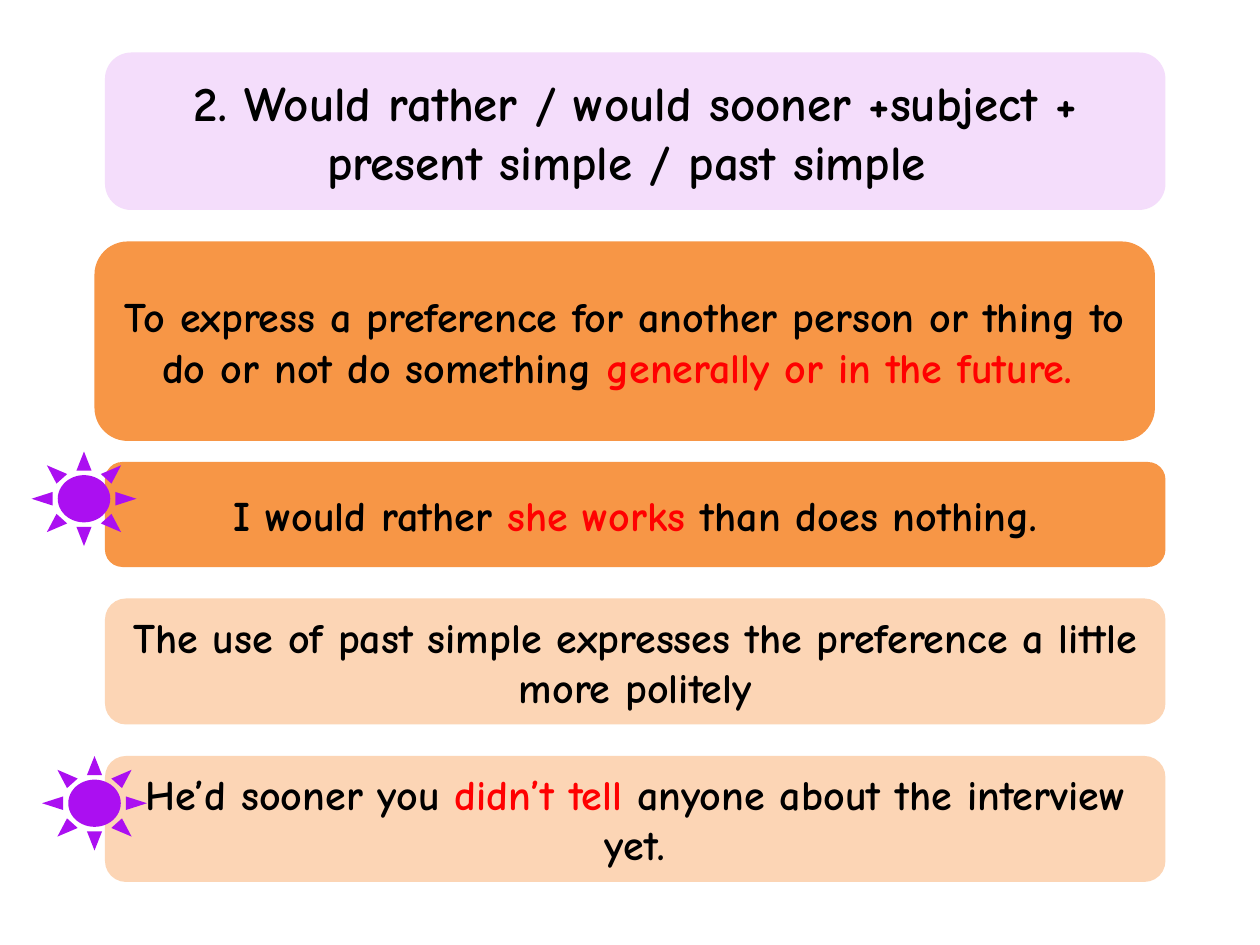
from pptx import Presentation
from pptx import util as u
from pptx.dml.color import RGBColor
from pptx.enum import shapes, text

PX = u.Inches(1) // 120
FONT = "Comic Neue"
BLACK = RGBColor(0x00, 0x00, 0x00)
RED = RGBColor(0xFF, 0x00, 0x00)
LILAC = RGBColor(0xF4, 0xDD, 0xFB)
ORANGE = RGBColor(0xF7, 0x96, 0x46)
PEACH = RGBColor(0xFC, 0xD5, 0xB5)
PURPLE = RGBColor(0xAB, 0x0F, 0xF1)

LEFT, WIDE = 100, 1010


class Page:
    def __init__(self, slide):
        self.slide = slide

    def shape(self, kind, x, y, w, h, fill):
        item = self.slide.shapes.add_shape(kind, x * PX, y * PX, w * PX, h * PX)
        item.shadow.inherit = False
        item.fill.solid()
        item.fill.fore_color.rgb = fill
        item.line.fill.background()
        return item

    def card(self, x, y, h, fill, runs, size=24):
        """Draw a rounded box; runs are (words, colour) pairs."""
        box = self.shape(shapes.MSO_SHAPE.ROUNDED_RECTANGLE, x, y, WIDE, h, fill)
        frame = box.text_frame
        frame.word_wrap = True
        frame.vertical_anchor = text.MSO_ANCHOR.MIDDLE
        para = frame.paragraphs[0]
        para.alignment = text.PP_ALIGN.CENTER
        for words, color in runs:
            run = para.add_run()
            run.text = words
            run.font.name = FONT
            run.font.size = u.Pt(size)
            run.font.bold = True
            run.font.color.rgb = color

    def sun(self, x, y):
        self.shape(shapes.MSO_SHAPE.SUN, x, y, 100, 90, PURPLE)


def main():
    deck = Presentation()
    deck.slide_width, deck.slide_height = 1200 * PX, 900 * PX
    page = Page(deck.slides.add_slide(deck.slide_layouts[6]))

    page.card(LEFT, 50, 150, LILAC, [
        ("2. Would rather / would sooner +subject + "
         "present simple / past simple ", BLACK)], size=28)
    page.card(LEFT - 10, 230, 190, ORANGE, [
        ("To express a preference for another person or thing "
         "to do or not do something ", BLACK),
        ("generally or in the future. ", RED)])
    page.card(LEFT, 440, 100, ORANGE, [
        ("I would rather ", BLACK),
        ("she works", RED),
        (" than does nothing.", BLACK)])
    page.card(LEFT, 570, 120, PEACH, [
        ("The use of past simple expresses the preference "
         "a little more politely", BLACK)])
    page.card(LEFT, 720, 120, PEACH, [
        ("He’d sooner you ", BLACK),
        ("didn’t tell ", RED),
        ("anyone about the interview yet.", BLACK)])

    page.sun(30, 430)
    page.sun(40, 720)
    deck.save("out.pptx")


if __name__ == "__main__":
    main()
